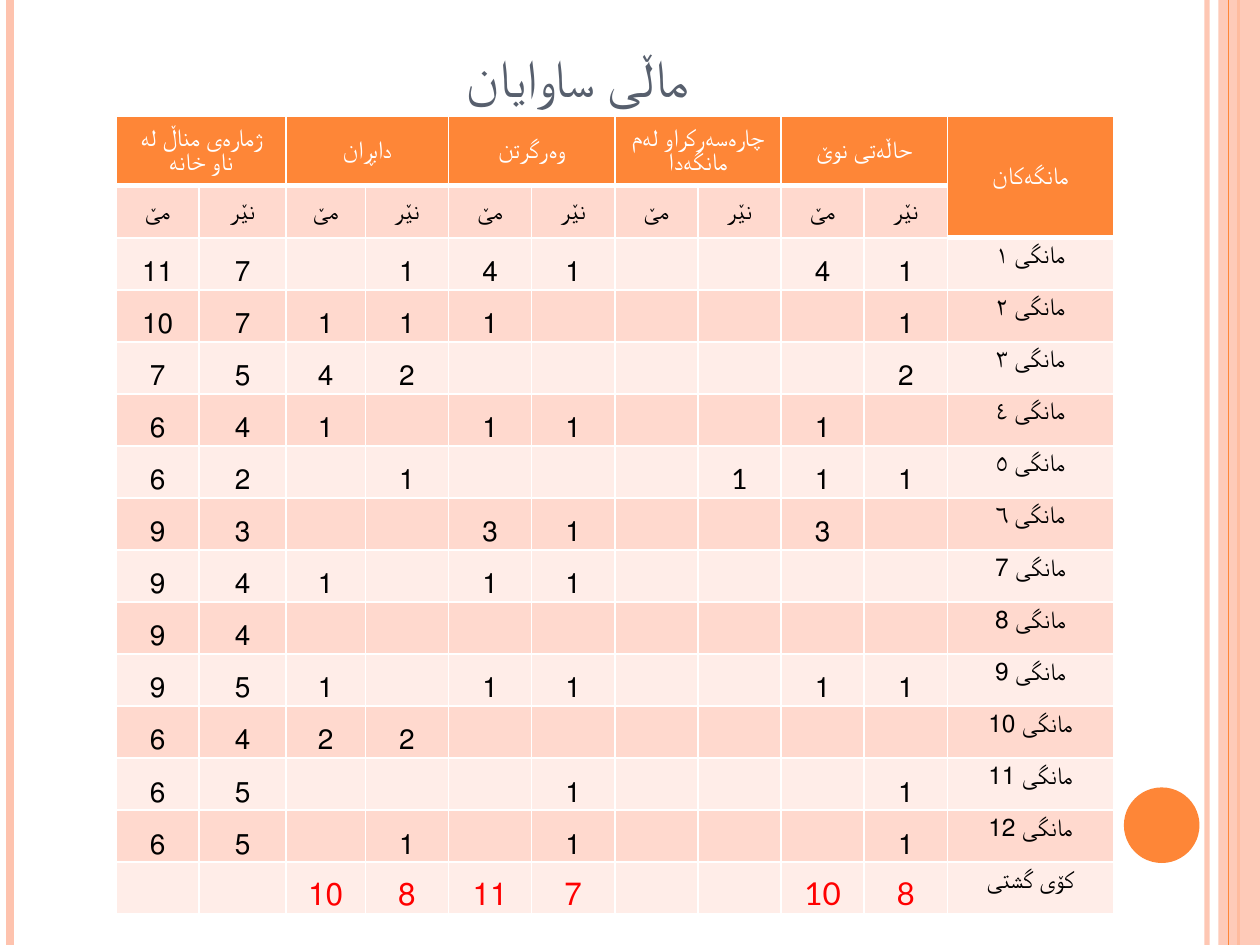
from lxml.etree import SubElement
from pptx import Presentation
from pptx.dml.color import RGBColor
from pptx.enum.shapes import MSO_CONNECTOR, MSO_SHAPE
from pptx.enum.text import MSO_ANCHOR as Anchor, PP_ALIGN as Align
from pptx.oxml.ns import qn
from pptx.util import Inches, Pt

ORANGE = RGBColor(0xFE, 0x86, 0x37)
PEACH = RGBColor(0xFE, 0xC3, 0xAE)
BAND_DARK = RGBColor(0xFF, 0xD9, 0xCE)
BAND_LIGHT = RGBColor(0xFF, 0xED, 0xE8)
SLATE = RGBColor(0x57, 0x5F, 0x6D)
WHITE = RGBColor(0xFF, 0xFF, 0xFF)
BLACK = RGBColor(0, 0, 0)
RED = RGBColor(0xFF, 0, 0)

TITLE = "ماڵی ساوایان"
GROUPS = ["ژمارەی مناڵ لە ناو خانە", "دابڕان", "وەرگرتن",
          "چارەسەركراو لەم مانگەدا", "حاڵەتی نوێ"]
MONTHS_HEADING = "مانگەكان"
GENDERS = ["مێ", "نێر"]
TOTAL = "كۆی گشتی"
EMPTY = "."
# One line per month, columns in slide order from left to right
COUNTS = {
    "مانگی ١": "11 7 . 1 4 1 . . 4 1",
    "مانگی ٢": "10 7 1 1 1 . . . . 1",
    "مانگی ٣": "7 5 4 2 . . . . . 2",
    "مانگی ٤": "6 4 1 . 1 1 . . 1 .",
    "مانگی ٥": "6 2 . 1 . . . 1 1 1",
    "مانگی ٦": "9 3 . . 3 1 . . 3 .",
    "مانگی 7": "9 4 1 . 1 1 . . . .",
    "مانگی 8": "9 4 . . . . . . . .",
    "مانگی 9": "9 5 1 . 1 1 . . 1 1",
    "مانگی 10": "6 4 2 2 . . . . . .",
    "مانگی 11": "6 5 . . . 1 . . . 1",
    "مانگی 12": "6 5 . 1 . 1 . . . 1",
    TOTAL: ". . 10 8 11 7 . . 10 8",
}
LEFT_TO_RIGHT = {("مانگی ٥", 7), (TOTAL, 8), (TOTAL, 9)}

TIGHT = {"margin_left": Inches(0.03), "margin_right": Inches(0.03),
         "margin_top": Inches(0.02), "margin_bottom": Inches(0.02)}
HEADING_CELL = {"vertical_anchor": Anchor.MIDDLE}
GENDER_CELL = {"vertical_anchor": Anchor.MIDDLE, **TIGHT}
COUNT_CELL = {"vertical_anchor": Anchor.BOTTOM, **TIGHT}
MONTH_CELL = {"vertical_anchor": Anchor.TOP}


def apply(target, values):
    for name, value in values.items():
        setattr(target, name, value)


def set_alpha(element, percent):
    """Make the first solid fill inside the element partly transparent."""
    color = next(element.iter(qn("a:solidFill")))[0]
    SubElement(color, qn("a:alpha"), val=str(percent * 1000))


class SlideBuilder:
    """Places elements by percent of the slide's width and height."""

    font_name = "Lato"

    def __init__(self, presentation):
        self.width = presentation.slide_width
        self.height = presentation.slide_height
        self.slide = presentation.slides.add_slide(presentation.slide_layouts[5])

    def x(self, percent):
        return round(self.width * percent / 100)

    def y(self, percent):
        return round(self.height * percent / 100)

    def box(self, left, top, width, height):
        return self.x(left), self.y(top), self.x(width), self.y(height)

    def add_text(self, frame, text, size, color, right_to_left=False):
        paragraph = frame.paragraphs[0]
        paragraph.alignment = Align.CENTER
        if right_to_left:
            paragraph._p.get_or_add_pPr().set("rtl", "1")
        run = paragraph.add_run()
        run.text = text
        apply(run.font, {"name": self.font_name, "size": Pt(size), "bold": False})
        run.font.color.rgb = color
        return run

    def title(self, text, *area):
        placeholder = self.slide.shapes.title
        apply(placeholder, dict(zip(("left", "top", "width", "height"), self.box(*area))))
        apply(placeholder.text_frame, {"vertical_anchor": Anchor.MIDDLE, "word_wrap": True})
        run = self.add_text(placeholder.text_frame, text, 30, SLATE)
        run._r.get_or_add_rPr().set("cap", "small")

    def vertical_line(self, left, color, weight, alpha=None):
        line = self.slide.shapes.add_connector(
            MSO_CONNECTOR.STRAIGHT, self.x(left), 0, self.x(left), self.height)
        line.line.color.rgb = color
        line.line.width = Pt(weight)
        if alpha:
            set_alpha(line._element.spPr, alpha)
        SubElement(line._element.spPr, qn("a:effectLst"))

    def shape(self, kind, color, *area, alpha=None):
        shape = self.slide.shapes.add_shape(kind, *self.box(*area))
        shape.shadow.inherit = False
        shape.fill.solid()
        shape.fill.fore_color.rgb = color
        if alpha:
            set_alpha(shape._element.spPr, alpha)
        shape.line.fill.background()

    def table(self, area, columns, rows):
        """Columns and rows are relative sizes that share the area."""
        left, top, width, height = self.box(*area)
        table = self.slide.shapes.add_table(
            len(rows), len(columns), left, top, width, height).table
        apply(table, {"first_row": False, "horz_banding": False})
        for column, share in zip(table.columns, columns):
            column.width = round(width * share / sum(columns))
        for row, share in zip(table.rows, rows):
            row.height = round(height * share / sum(rows))
        return table

    def cell(self, cell, fill, style, bottom=1):
        apply(cell, style)
        cell.fill.solid()
        cell.fill.fore_color.rgb = fill
        properties = cell._tc.get_or_add_tcPr()
        weights = {"a:lnL": 1, "a:lnR": 1, "a:lnT": 1, "a:lnB": bottom}
        for position, (tag, weight) in enumerate(weights.items()):
            border = SubElement(properties, qn(tag), w=str(Pt(weight)))
            SubElement(SubElement(border, qn("a:solidFill")), qn("a:srgbClr"), val=str(WHITE))
            properties.insert(position, border)


def add_counts_table(builder):
    last = 2 * len(GROUPS)
    columns = [0.66, 0.69, 0.63] + [0.66] * 7 + [1.32]
    rows = [0.55] + [0.41] * (len(COUNTS) + 1)
    table = builder.table((9.2, 12.27, 79.2, 84.5), columns, rows)

    for column in range(last + 1):
        builder.cell(table.cell(0, column), ORANGE, HEADING_CELL, bottom=3)
    for index, group in enumerate(GROUPS):
        heading = table.cell(0, 2 * index)
        heading.merge(table.cell(0, 2 * index + 1))
        builder.add_text(heading.text_frame, group, 14, WHITE)
    builder.cell(table.cell(1, last), ORANGE, HEADING_CELL, bottom=3)
    heading = table.cell(0, last)
    heading.merge(table.cell(1, last))
    builder.add_text(heading.text_frame, MONTHS_HEADING, 14, WHITE)

    for column in range(last):
        cell = table.cell(1, column)
        builder.cell(cell, BAND_DARK, GENDER_CELL)
        builder.add_text(cell.text_frame, GENDERS[column % 2], 14, BLACK, True)

    for row, (month, counts) in enumerate(COUNTS.items(), start=2):
        band = BAND_DARK if row % 2 else BAND_LIGHT
        size, color = (18, RED) if month == TOTAL else (16, BLACK)
        for column, count in enumerate(counts.split()):
            cell = table.cell(row, column)
            builder.cell(cell, band, COUNT_CELL)
            if count != EMPTY:
                builder.add_text(cell.text_frame, count, size, color,
                                 (month, column) not in LEFT_TO_RIGHT)
        cell = table.cell(row, last)
        builder.cell(cell, band, MONTH_CELL)
        builder.add_text(cell.text_frame, month, 14, BLACK)


def main():
    presentation = Presentation()
    presentation.slide_width, presentation.slide_height = Inches(10), Inches(7.5)
    builder = SlideBuilder(presentation)
    builder.vertical_line(95.8, PEACH, 3, alpha=93)
    builder.vertical_line(0.8, PEACH, 4.5)
    builder.vertical_line(98.3, ORANGE, 1.5)
    builder.shape(MSO_SHAPE.RECTANGLE, PEACH, 96.7, 0, 3.3, 100, alpha=87)
    builder.vertical_line(97.5, ORANGE, 0.75)
    builder.shape(MSO_SHAPE.OVAL, ORANGE, 89.2, 83.33, 6, 8)
    builder.title(TITLE, 5, 4, 81.7, 8.27)
    add_counts_table(builder)
    presentation.save("out.pptx")


if __name__ == "__main__":
    main()
